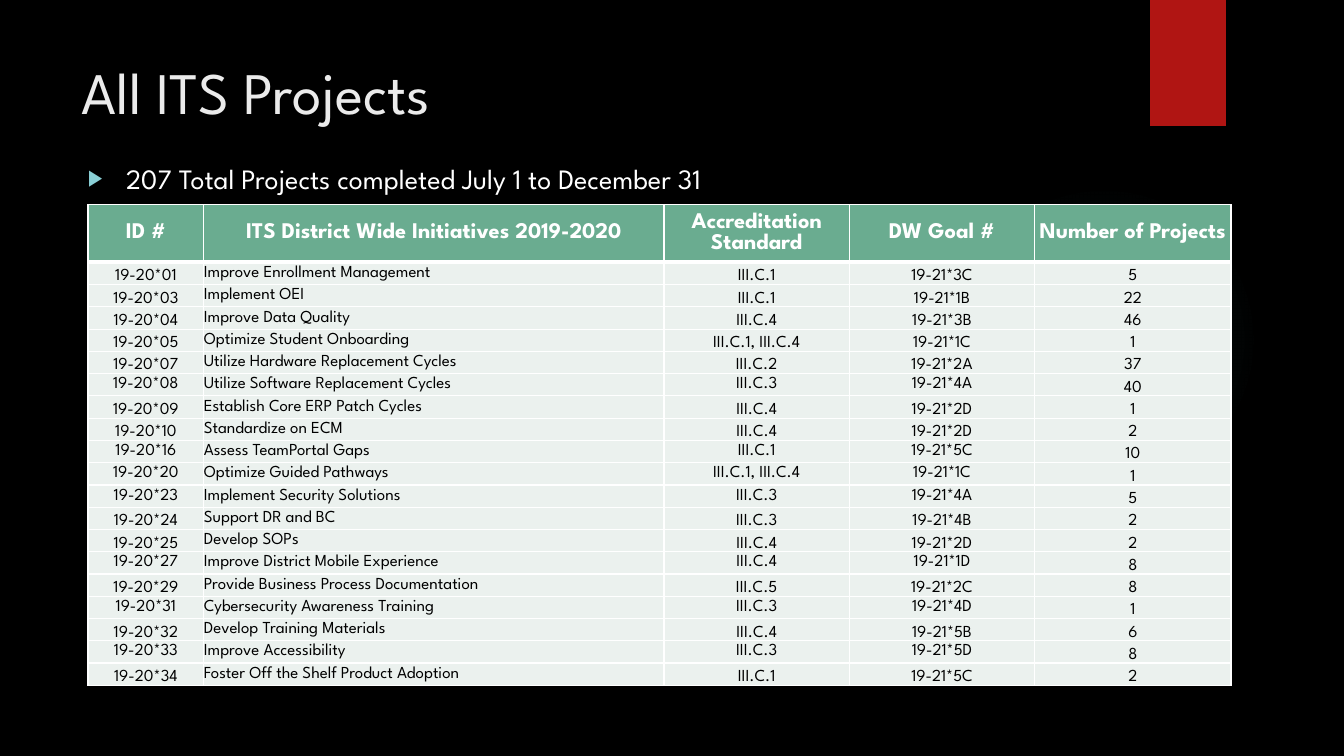
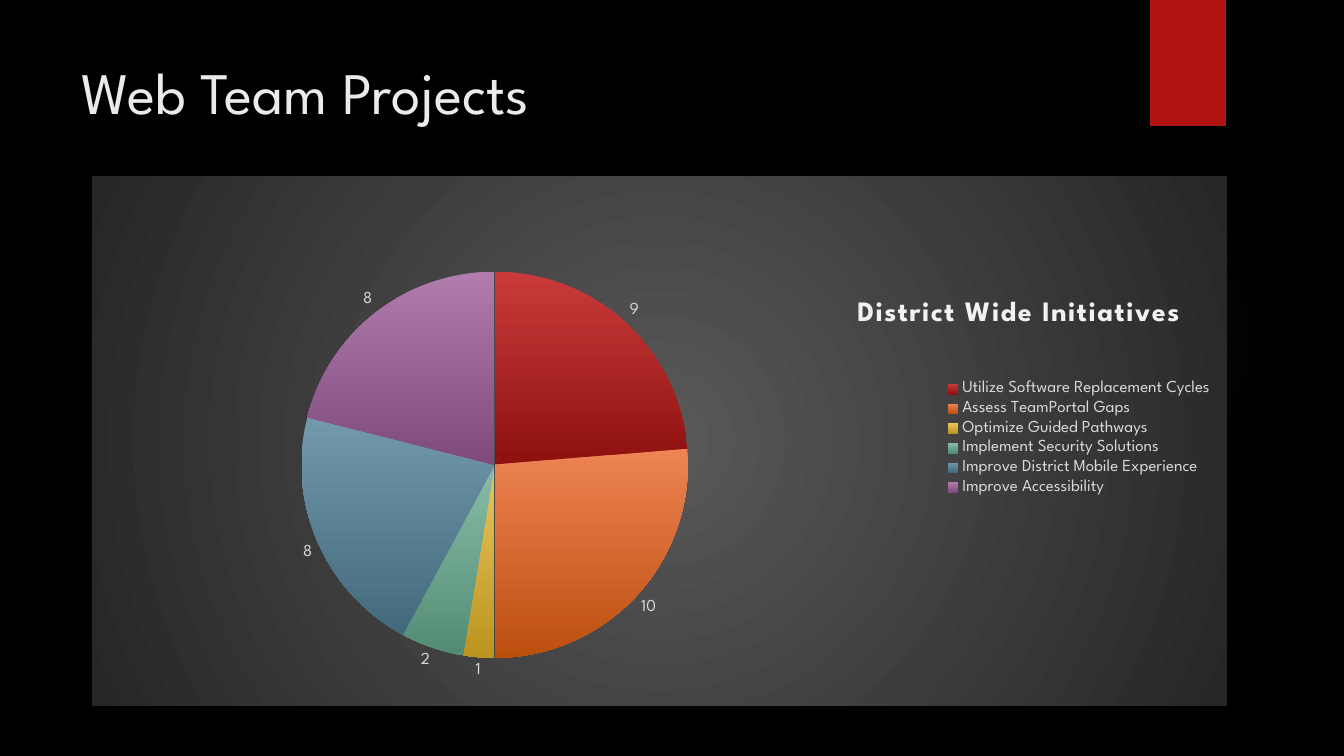
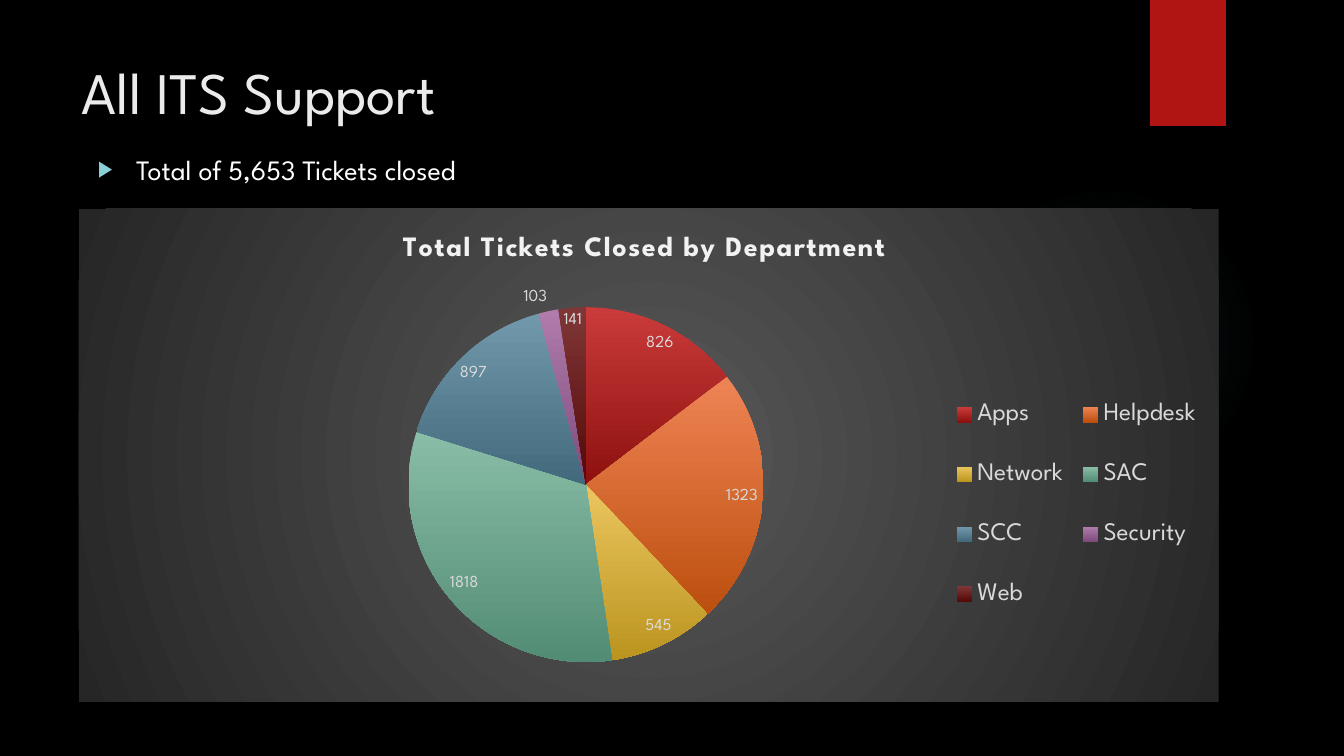
import dataclasses

import pptx
import pptx.chart.data
import pptx.dml.color
import pptx.enum.chart
import pptx.enum.shapes
import pptx.enum.text
import pptx.oxml
import pptx.oxml.ns
import pptx.util

Pt = pptx.util.Pt
ALIGN = pptx.enum.text.PP_ALIGN
ANCHOR = pptx.enum.text.MSO_ANCHOR
LABEL = pptx.enum.chart.XL_LABEL_POSITION


@dataclasses.dataclass(frozen=True)
class Theme:
    font: str = "League Spartan"
    background: str = "000000"
    band: str = "B01513"
    glow: str = "50B9C1"
    title: str = "EBEBEB"
    body: str = "FFFFFF"
    bullet: str = "8AD0D6"
    header_fill: str = "6AAC90"
    row_fill: str = "EBF1EE"
    row_text: str = "000000"
    rule: str = "FFFFFF"
    chart_title: str = "F2F2F2"
    chart_text: str = "D9D9D9"
    chart_inner: str = "595959"
    chart_outer: str = "262626"
    slices: tuple = (
        ("C93B3A", "8D110F"), ("EE8455", "BC4F0E"), ("EBC65F", "BB941F"),
        ("89BDA7", "538C74"), ("7198AB", "436A7C"), ("AF7CAC", "7F4B7C"),
        ("7F3636", "550A09"),
    )
    title_size: int = 42
    body_size: int = 20
    legend_size: int = 18
    header_size: int = 16
    small_size: int = 12
    chart_size: int = 10


def rgb(value):
    return pptx.dml.color.RGBColor.from_string(value)


def xml(markup):
    """Parse markup whose root tag has a {ns} slot for the namespaces."""
    return pptx.oxml.parse_xml(markup.replace("{ns}", pptx.oxml.ns.nsdecls("a", "c"), 1))


def radial_fill(stops):
    """Gradient from the centre out; stops are (percent, colour, opacity percent)."""
    marks = "".join(
        f'<a:gs pos="{pos * 1000}"><a:srgbClr val="{color}">'
        f'<a:alpha val="{opacity * 1000}"/></a:srgbClr></a:gs>'
        for pos, color, opacity in stops)
    return xml(f'<a:gradFill {{ns}} rotWithShape="1"><a:gsLst>{marks}</a:gsLst><a:path path="circle">'
               '<a:fillToRect l="50000" t="50000" r="50000" b="50000"/></a:path></a:gradFill>')


def place(chart, tag, index, x, y, w=None, h=None):
    """Fix a chart part at shares of the chart; index is the layout's place among its children."""
    part = chart.element.xpath(f"//c:{tag}")[0]
    for old in part.xpath("./c:layout"):
        part.remove(old)
    target = '<c:layoutTarget val="inner"/>' if tag == "plotArea" else ""
    modes = '<c:xMode val="edge"/><c:yMode val="edge"/>'
    sizes = "".join(f'<c:{key} val="{value}"/>' for key, value in zip("xywh", (x, y, w, h))
                    if value is not None)
    part.insert(index, xml(f"<c:layout {{ns}}><c:manualLayout>{target}{modes}{sizes}"
                           "</c:manualLayout></c:layout>"))


class Deck:
    """Holds the theme and the current slide; boxes are percentages of the slide."""

    def __init__(self, theme):
        self.theme = theme
        self.prs = pptx.Presentation()
        self.prs.slide_width = pptx.util.Inches(13.33)
        self.prs.slide_height = pptx.util.Inches(7.5)
        fill = self.prs.slide_master.background.fill
        fill.solid()
        fill.fore_color.rgb = rgb(theme.background)

    def box(self, x, y, w, h):
        width, height = self.prs.slide_width, self.prs.slide_height
        return [round(share * full / 100) for share, full in
                ((x, width), (y, height), (w, width), (h, height))]

    def style(self, font, size, color, bold=False):
        font.name, font.size, font.bold = self.theme.font, Pt(size), bold
        font.color.rgb = rgb(color)

    def move(self, sp, box):
        sp.left, sp.top, sp.width, sp.height = self.box(*box)

    def slide(self, title, bullet=None, bullet_at=None):
        layout = self.prs.slide_layouts[1 if bullet else 5]
        self.s = self.prs.slides.add_slide(layout)
        if len(self.prs.slides) == 1:
            self.decorate_master()
        sp = self.s.shapes.title
        self.move(sp, (5.33, 6.67, 77.18, 20.4))
        tf = sp.text_frame
        tf.text = title
        tf.vertical_anchor = ANCHOR.TOP
        p = tf.paragraphs[0]
        p.alignment = ALIGN.LEFT
        self.style(p.runs[0].font, self.theme.title_size, self.theme.title)
        if bullet:
            self.bullet(bullet, bullet_at)

    def decorate_master(self):
        """Draw the glow and the band on the slide, then move them to the master."""
        t = self.theme
        kinds = pptx.enum.shapes.MSO_SHAPE
        glow = self.s.shapes.add_shape(kinds.OVAL, *self.box(70.58, 24.4, 23.1, 41.07))
        band = self.s.shapes.add_shape(kinds.RECTANGLE, *self.box(85.58, 0, 5.63, 16.67))
        for index, sp in enumerate((glow, band)):
            sp.line.fill.background()
            sp.shadow.inherit = False
            sp.element.nvSpPr.cNvPr.set("id", str(101 + index))
            self.prs.slide_master.shapes.element.insert(2 + index, sp.element)
        glow.element.spPr.xpath("./a:prstGeom")[0].addnext(
            radial_fill([(0, t.glow, 7), (36, t.glow, 6), (69, t.glow, 0)]))
        band.fill.solid()
        band.fill.fore_color.rgb = rgb(t.band)
        band.element.spPr.xpath("./a:effectLst")[0].append(xml(
            f'<a:outerShdw {{ns}} blurRad="{Pt(3)}" dist="{Pt(2)}" dir="5400000">'
            '<a:srgbClr val="000000"><a:alpha val="45000"/></a:srgbClr></a:outerShdw>'))

    def bullet(self, text, at):
        sp = self.s.placeholders[1]
        self.move(sp, (*at, 73.35, 61.2))
        tf = sp.text_frame
        tf.text = text
        tf.vertical_anchor = ANCHOR.TOP
        p = tf.paragraphs[0]
        p.space_before = Pt(0)
        pPr = p._p.get_or_add_pPr()
        indent = pptx.util.Inches(0.38)
        pPr.set("marL", str(indent))
        pPr.set("indent", str(-indent))
        for markup in (f'<a:buClr {{ns}}><a:srgbClr val="{self.theme.bullet}"/></a:buClr>',
                       '<a:buSzPct {ns} val="80000"/>', '<a:buChar {ns} char="▶"/>'):
            pPr.append(xml(markup))
        self.style(p.runs[0].font, self.theme.body_size, self.theme.body)

    def cell(self, cell, text, fill, size, color, bold, align, anchor, top=1, bottom=1):
        cell.margin_left = cell.margin_right = cell.margin_top = cell.margin_bottom = 0
        cell.vertical_anchor = anchor
        tcPr = cell._tc.get_or_add_tcPr()
        for side, width in (("L", 1), ("R", 1), ("T", top), ("B", bottom)):
            tcPr.append(xml(f'<a:ln{side} {{ns}} w="{Pt(width)}"><a:solidFill>'
                            f'<a:srgbClr val="{self.theme.rule}"/></a:solidFill></a:ln{side}>'))
        cell.fill.solid()
        cell.fill.fore_color.rgb = rgb(fill)
        p = cell.text_frame.paragraphs[0]
        p.text = text
        p.alignment = align
        self.style(p.runs[0].font, size, color, bold)

    def table(self, box, header, rows, weights, centred):
        """IDs in centred have their row text in the middle, the others at the bottom."""
        t = self.theme
        x, y, w, h = self.box(*box)
        table = self.s.shapes.add_table(len(rows) + 1, len(header), x, y, w, h).table
        table.horz_banding = False
        for column, weight in zip(table.columns, weights):
            column.width = round(w * weight / sum(weights))
        for i, row in enumerate(table.rows):
            row.height = round(h * (0.88 / len(rows) if i else 0.12))
        for j, text in enumerate(header):
            self.cell(table.cell(0, j), text, t.header_fill, t.header_size, t.body, True,
                      ALIGN.CENTER, ANCHOR.MIDDLE, bottom=3)
        for i, row in enumerate(rows, 1):
            for j, text in enumerate(row):
                middle = j == 1 or (j < 4 and row[0] in centred)
                self.cell(table.cell(i, j), text, t.row_fill, t.small_size, t.row_text, False,
                          ALIGN.LEFT if j == 1 else ALIGN.CENTER,
                          ANCHOR.MIDDLE if middle else ANCHOR.BOTTOM, top=3 if i == 1 else 1)

    def pie(self, box, title, values, label_position, legend_size, title_at, legend_at, plot_at):
        t = self.theme
        data = pptx.chart.data.CategoryChartData()
        data.categories = list(values)
        data.add_series("Series 1", list(values.values()))
        chart = self.s.shapes.add_chart(
            pptx.enum.chart.XL_CHART_TYPE.PIE, *self.box(*box), data).chart
        self.style(chart.font, t.chart_size, t.body)
        background = xml("<c:spPr {ns}><a:ln><a:noFill/></a:ln></c:spPr>")
        background.insert(0, radial_fill([(0, t.chart_inner, 100), (100, t.chart_outer, 100)]))
        chart.element.xpath("./c:txPr")[0].addprevious(background)

        chart.has_title = True
        chart.chart_title.include_in_layout = False
        tf = chart.chart_title.text_frame
        tf.text = title
        r = tf.paragraphs[0].runs[0]
        self.style(r.font, t.body_size, t.chart_title, True)
        r._r.get_or_add_rPr().set("spc", "100")

        chart.has_legend = True
        chart.legend.position = pptx.enum.chart.XL_LEGEND_POSITION.RIGHT
        chart.legend.include_in_layout = False
        self.style(chart.legend.font, legend_size, t.chart_text)

        plot = chart.plots[0]
        plot.vary_by_categories = True
        plot.has_data_labels = True
        labels = plot.data_labels
        labels.show_value, labels.show_percentage = True, False
        labels.position = label_position
        self.style(labels.font, t.small_size, t.chart_text)
        for i, colors in zip(range(len(values)), t.slices):
            look = plot.series[0].points[i].format
            look.line.fill.background()
            look.fill.gradient()
            look.fill.gradient_angle = 270
            for stop, color in zip(look.fill.gradient_stops, colors):
                stop.color.rgb = rgb(color)

        place(chart, "title", 1, *title_at)
        place(chart, "legend", 1, *legend_at)
        place(chart, "plotArea", 0, *plot_at)


HEADER = ("ID #", "ITS District Wide Initiatives 2019-2020", "Accreditation Standard",
          "DW Goal #", "Number of Projects")
PROJECTS = (
    ("01", "Improve Enrollment Management", "III.C.1", "3C", 5),
    ("03", "Implement OEI", "III.C.1", "1B", 22),
    ("04", "Improve Data Quality", "III.C.4", "3B", 46),
    ("05", "Optimize Student Onboarding", "III.C.1, III.C.4", "1C", 1),
    ("07", "Utilize Hardware Replacement Cycles", "III.C.2", "2A", 37),
    ("08", "Utilize Software Replacement Cycles", "III.C.3", "4A", 40),
    ("09", "Establish Core ERP Patch Cycles", "III.C.4", "2D", 1),
    ("10", "Standardize on ECM", "III.C.4", "2D", 2),
    ("16", "Assess TeamPortal Gaps", "III.C.1", "5C", 10),
    ("20", "Optimize Guided Pathways", "III.C.1, III.C.4", "1C", 1),
    ("23", "Implement Security Solutions", "III.C.3", "4A", 5),
    ("24", "Support DR and BC", "III.C.3", "4B", 2),
    ("25", "Develop SOPs", "III.C.4", "2D", 2),
    ("27", "Improve District Mobile Experience", "III.C.4", "1D", 8),
    ("29", "Provide Business Process Documentation", "III.C.5", "2C", 8),
    ("31", "Cybersecurity Awareness Training", "III.C.3", "4D", 1),
    ("32", "Develop Training Materials", "III.C.4", "5B", 6),
    ("33", "Improve Accessibility", "III.C.3", "5D", 8),
    ("34", "Foster Off the Shelf Product Adoption", "III.C.1", "5C", 2),
)
CENTRED = {f"19-20*{n}" for n in ("08", "16", "20", "23", "27", "31", "33")}
WEB_PROJECTS = {
    "Utilize Software Replacement Cycles": 9,
    "Assess TeamPortal Gaps": 10,
    "Optimize Guided Pathways": 1,
    "Implement Security Solutions": 2,
    "Improve District Mobile Experience": 8,
    "Improve Accessibility": 8,
}
TICKETS = {"Apps": 826, "Helpdesk": 1323, "Network": 545, "SAC": 1818,
           "SCC": 897, "Security": 103, "Web": 141}


def main():
    theme = Theme()
    deck = Deck(theme)

    deck.slide("All ITS Projects", "207 Total Projects completed July 1 to December 31",
               (5.78, 20.67))
    rows = [(f"19-20*{number}", name, standard, f"19-21*{goal}", str(count))
            for number, name, standard, goal, count in PROJECTS]
    deck.table((6.55, 27.07, 85.05, 63.6), HEADER, rows,
               (1.15, 4.57, 1.84, 1.84, 1.95), CENTRED)

    deck.slide("Web Team Projects")
    deck.pie((6.83, 23.33, 84.45, 70), "District Wide Initiatives", WEB_PROJECTS,
             LABEL.OUTSIDE_END, theme.small_size, title_at=(0.67, 0.22),
             legend_at=(0.75, 0.38, 0.24, 0.23), plot_at=(0.06, 0.18, 0.59, 0.73))

    deck.slide("All ITS Support", "Total of 5,653 Tickets closed", (6.53, 19.47))
    deck.pie((5.85, 27.6, 84.83, 65.2), "Total Tickets Closed by Department", TICKETS,
             LABEL.BEST_FIT, theme.legend_size, title_at=(0.28, 0.04),
             legend_at=(0.76, 0.32, 0.23, 0.56), plot_at=(0.08, 0.2, 0.73, 0.72))

    deck.prs.save("out.pptx")


if __name__ == "__main__":
    main()
